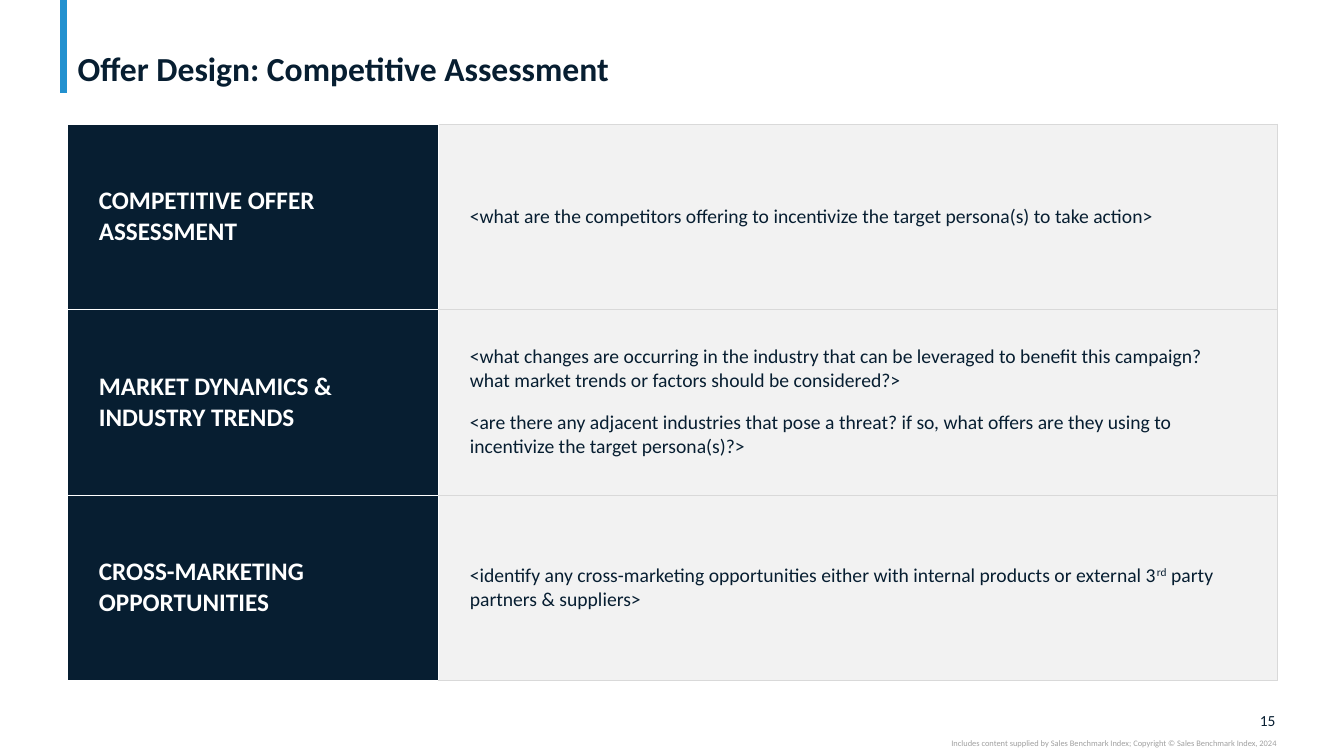
from lxml import etree
from pptx import Presentation
from pptx.dml.color import RGBColor
from pptx.enum.shapes import MSO_CONNECTOR
from pptx.enum.text import MSO_ANCHOR, MSO_AUTO_SIZE, PP_ALIGN
from pptx.oxml import parse_xml
from pptx.oxml.ns import nsdecls, qn
from pptx.util import Inches, Pt

COLORS = {
    "navy": "071E31",
    "blue": "2391CF",
    "white": "FFFFFF",
    "panel": "F2F2F2",
    "rule": "D9D9D9",
    "footer": "A0A0A0",
}


def write(frame, *texts, size, color="navy", bold=False, align=PP_ALIGN.LEFT,
          anchor=MSO_ANCHOR.TOP, gap=0, line_spacing=None):
    """Fill a frame with one paragraph per text; parts between ^ marks are superscript."""
    frame.word_wrap = True
    frame.vertical_anchor = anchor
    for index, text in enumerate(texts):
        para = frame.paragraphs[0] if index == 0 else frame.add_paragraph()
        para.alignment = align
        para.space_before = Pt(gap if index else 0)
        if line_spacing:
            para.line_spacing = line_spacing
        for part, words in enumerate(text.split("^")):
            span = para.add_run()
            span.text = words
            span.font.name = "Calibri"
            span.font.size = Pt(size)
            span.font.bold = bold
            span.font.color.rgb = RGBColor.from_string(COLORS[color])
            if part % 2:
                span.font._element.set("baseline", "30000")


def style_cell(cell, fill, **borders):
    """Set margins, fill and half-point borders, given as side=colour name in L, R, T, B order."""
    cell.margin_left = cell.margin_right = Inches(0.31)
    cell.margin_top = cell.margin_bottom = Inches(0.2)
    properties = cell._tc.get_or_add_tcPr()
    for side, color in borders.items():
        properties.append(parse_xml(
            f'<a:ln{side} {nsdecls("a")} w="{Pt(0.5)}"><a:solidFill>'
            f'<a:srgbClr val="{COLORS[color]}"/></a:solidFill></a:ln{side}>'))
    cell.fill.solid()
    cell.fill.fore_color.rgb = RGBColor.from_string(COLORS[fill])


deck = Presentation()
deck.slide_width, deck.slide_height = Inches(13.33), Inches(7.5)
page = deck.slides.add_slide(deck.slide_layouts[5])

# Accent bar and title
accent = page.shapes.add_connector(
    MSO_CONNECTOR.STRAIGHT, Inches(0.63), Inches(0), Inches(0.63), Inches(0.92))
accent.line.color.rgb = RGBColor.from_string(COLORS["blue"])
accent.line.width = Pt(5)
etree.SubElement(accent._element.spPr, qn("a:effectLst"))

title = page.shapes.title
title.left, title.top = Inches(0.67), Inches(0.04)
title.width, title.height = Inches(11.99), Inches(0.84)
title.text_frame.auto_size = MSO_AUTO_SIZE.NONE
title.text_frame.margin_left = title.text_frame.margin_right = Inches(0.1)
title.text_frame.margin_top = title.text_frame.margin_bottom = 0
write(title.text_frame, "Offer Design: Competitive Assessment", size=24, bold=True,
      anchor=MSO_ANCHOR.BOTTOM, line_spacing=0.9)

# Assessment table
topics = [
    ("COMPETITIVE OFFER ASSESSMENT", [
        "<what are the competitors offering to incentivize the target persona(s) to take action>",
    ]),
    ("MARKET DYNAMICS & INDUSTRY TRENDS", [
        "<what changes are occurring in the industry that can be leveraged to benefit this "
        "campaign? what market trends or factors should be considered?>",
        "<are there any adjacent industries that pose a threat? if so, what offers are they "
        "using to incentivize the target persona(s)?>",
    ]),
    ("CROSS-MARKETING OPPORTUNITIES", [
        "<identify any cross-marketing opportunities either with internal products or "
        "external 3^rd^ party partners & suppliers>",
    ]),
]
table = page.shapes.add_table(
    len(topics), 2, Inches(0.67), Inches(1.23), Inches(12), Inches(5.52)).table
table.columns[0].width, table.columns[1].width = Inches(3.68), Inches(8.32)
for row, (heading, prompts) in enumerate(topics):
    heading_cell, prompt_cell = table.cell(row, 0), table.cell(row, 1)
    style_cell(heading_cell, "navy", L="white", R="white", T="white", B="white")
    style_cell(prompt_cell, "panel", L="white", R="rule", T="rule", B="rule")
    heading_cell.vertical_anchor = prompt_cell.vertical_anchor = MSO_ANCHOR.MIDDLE
    write(heading_cell.text_frame, heading, size=18, color="white", bold=True,
          anchor=MSO_ANCHOR.MIDDLE)
    write(prompt_cell.text_frame, *prompts, size=14, gap=13, anchor=MSO_ANCHOR.MIDDLE)

# Page number and copyright line
footers = [
    ("15", 12.32, 7.05, 0.33, 0.19, 11, "navy", MSO_ANCHOR.MIDDLE),
    ("Includes content supplied by Sales Benchmark Index; "
     "Copyright © Sales Benchmark Index, 2024",
     7.5, 7.32, 5.16, 0.1, 6, "footer", MSO_ANCHOR.TOP),
]
for text, left, top, width, height, size, color, anchor in footers:
    box = page.shapes.add_textbox(Inches(left), Inches(top), Inches(width), Inches(height))
    frame = box.text_frame
    frame.margin_left = frame.margin_right = frame.margin_top = frame.margin_bottom = 0
    write(frame, text, size=size, color=color, align=PP_ALIGN.RIGHT, anchor=anchor)

deck.save("out.pptx")
